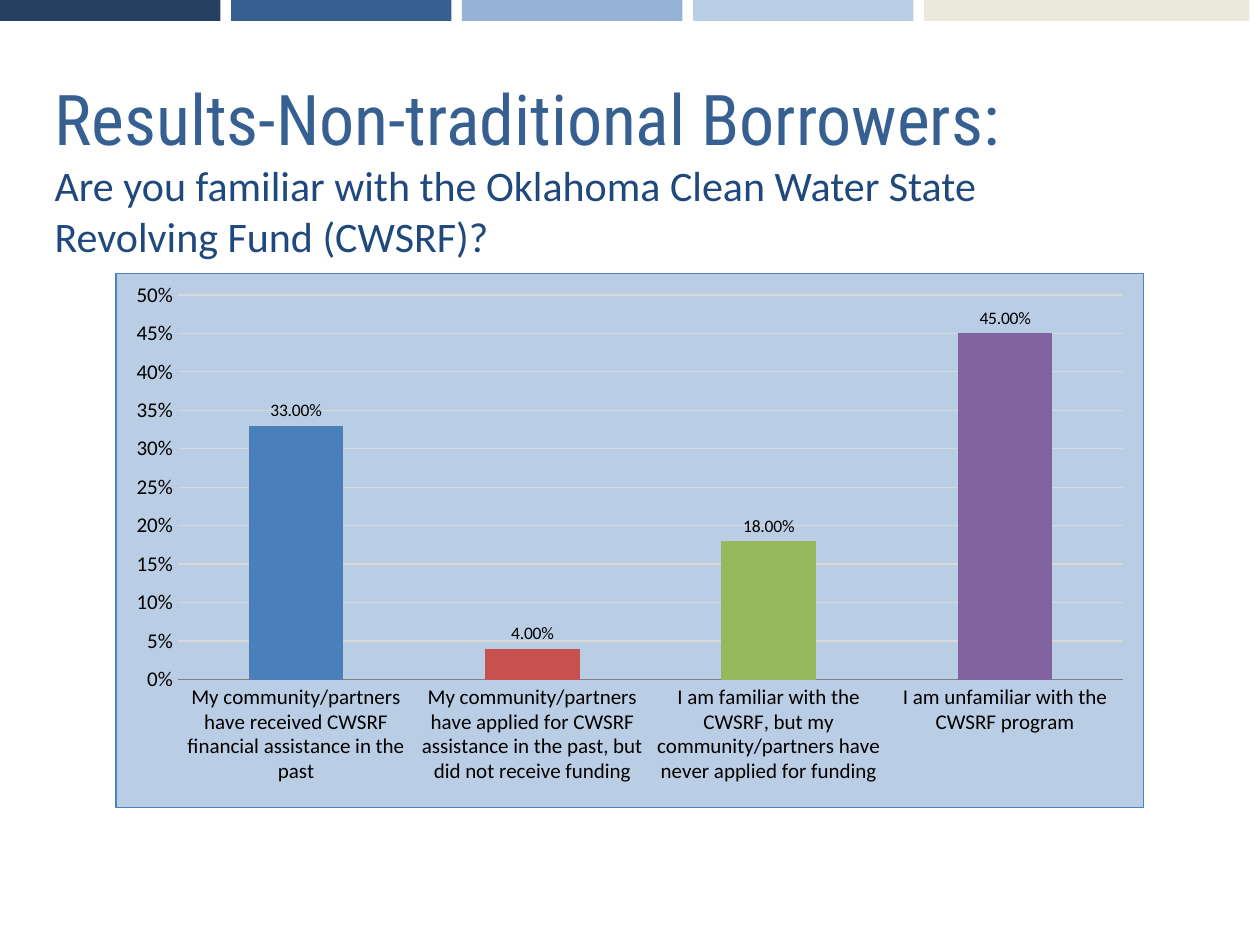
from lxml import etree
from pptx import Presentation
from pptx.chart.data import CategoryChartData
from pptx.dml.color import RGBColor
from pptx.enum.chart import XL_CHART_TYPE, XL_LABEL_POSITION, XL_TICK_MARK
from pptx.enum.shapes import MSO_SHAPE
from pptx.enum.text import MSO_ANCHOR, MSO_AUTO_SIZE, PP_ALIGN
from pptx.oxml import parse_xml
from pptx.oxml.ns import nsdecls, qn
from pptx.util import Inches, Pt

COLUMN = XL_CHART_TYPE.COLUMN_CLUSTERED
OUTSIDE = XL_LABEL_POSITION.OUTSIDE_END
NO_TICK = XL_TICK_MARK.NONE
RECT = MSO_SHAPE.RECTANGLE
MIDDLE = MSO_ANCHOR.MIDDLE
NO_FIT = MSO_AUTO_SIZE.NONE
LEFT = PP_ALIGN.LEFT
UNIT = Inches(1) / 12

STRIPES = [("254061", 100), ("376092", 100), ("95B3D7", 100),
           ("B9CDE5", 100), ("DDD9C3", 58)]
TITLE = [
    ("Results-Non-traditional Borrowers:", "376092",
     {"size": Pt(40), "name": "Roboto Condensed"}),
    ("Are you familiar with the Oklahoma Clean Water State Revolving Fund (CWSRF)?",
     "1F497D", {"size": Pt(24), "name": "Calibri"}),
]
ANSWERS = [
    ("My community/partners have received CWSRF financial assistance in the past",
     0.33, "4980BA"),
    ("My community/partners have applied for CWSRF assistance in the past, "
     "but did not receive funding", 0.04, "C6514E"),
    ("I am familiar with the CWSRF, but my community/partners have never "
     "applied for funding", 0.18, "96B95D"),
    ("I am unfamiliar with the CWSRF program", 0.45, "81649F"),
]


def rgb(value):
    """Turn a hex string into a colour."""
    return RGBColor.from_string(value)


def apply(target, values):
    """Set each named attribute on the target."""
    for name, value in values.items():
        setattr(target, name, value)


class SlideBuilder:
    """Hold the style and the slide on a grid of twelfths of an inch."""

    font = "Calibri"
    panel, border, grid, axis = "B9CDE5", "4F81BD", "D8D8D8", "808080"

    def __init__(self, prs):
        """Add a title-only slide."""
        self.s = prs.slides.add_slide(prs.slide_layouts[5])

    def box(self, *cells):
        """Convert grid cells to lengths."""
        return [round(cell * UNIT) for cell in cells]

    def stripe(self, cells, color, opacity):
        """Draw one plain colour block."""
        sp = self.s.shapes.add_shape(RECT, *self.box(*cells))
        sp.shadow.inherit = False
        sp.line.fill.background()
        sp.fill.solid()
        sp.fill.fore_color.rgb = rgb(color)
        if opacity < 100:
            clr = sp.fill._xPr.find(".//" + qn("a:srgbClr"))
            etree.SubElement(clr, qn("a:alpha"), val=str(opacity * 1000))

    def title(self, cells, lines):
        """Place and fill the title, one paragraph for each line."""
        sp = self.s.shapes.title
        apply(sp, dict(zip(("left", "top", "width", "height"), self.box(*cells))))
        tf = sp.text_frame
        apply(tf, {"word_wrap": True, "auto_size": NO_FIT, "vertical_anchor": MIDDLE})
        tf.text = "\n".join(text for text, _, _ in lines)
        for p, (_, color, values) in zip(tf.paragraphs, lines):
            p.alignment = LEFT
            r = p.runs[0]
            apply(r.font, values)
            r.font.color.rgb = rgb(color)

    def chart(self, cells, answers, plot_area):
        """Add the column chart with one colour for each answer."""
        data = CategoryChartData(number_format="0.00%")
        data.categories = [text for text, _, _ in answers]
        data.add_series("Series 1", [value for _, value, _ in answers])
        chart = self.s.shapes.add_chart(COLUMN, *self.box(*cells), data).chart
        apply(chart, {"has_legend": False, "has_title": False})
        apply(chart.font, {"size": Pt(18), "name": self.font})
        chart.font.color.rgb = rgb("000000")
        plot = chart.plots[0]
        apply(plot, {"gap_width": 150, "vary_by_categories": False,
                     "has_data_labels": True})
        labels = plot.data_labels
        apply(labels, {"show_value": True, "number_format": "0.00%",
                       "number_format_is_linked": False, "position": OUTSIDE})
        labels.font.size = Pt(10)
        for i, (_, _, color) in enumerate(answers):
            fill = plot.series[0].points[i].format.fill
            fill.solid()
            fill.fore_color.rgb = rgb(color)
        self.axes(chart)
        self.frame(chart, plot_area)

    def axes(self, chart):
        """Style both axes and the gridlines."""
        cat, val = chart.category_axis, chart.value_axis
        for axis in (cat, val):
            apply(axis, {"major_tick_mark": NO_TICK, "minor_tick_mark": NO_TICK})
            axis.tick_labels.font.size = Pt(12)
        apply(val, {"minimum_scale": 0, "maximum_scale": 0.5, "major_unit": 0.05,
                    "has_major_gridlines": True})
        apply(val.tick_labels, {"number_format": "0%", "number_format_is_linked": False})
        val.format.line.fill.background()
        for line, color in ((cat.format.line, self.axis),
                            (val.major_gridlines.format.line, self.grid)):
            line.width = Pt(0.75)
            line.color.rgb = rgb(color)

    def frame(self, chart, plot_area):
        """Fill and outline the chart and fix its inner plot area."""
        root = chart._chartSpace
        root.find(qn("c:chart")).addnext(parse_xml(
            f'<c:spPr {nsdecls("c", "a")}><a:solidFill><a:srgbClr val="{self.panel}"/>'
            f'</a:solidFill><a:ln w="{Pt(0.75)}"><a:solidFill>'
            f'<a:srgbClr val="{self.border}"/></a:solidFill></a:ln></c:spPr>'))
        area = root.find(".//" + qn("c:plotArea"))
        for old in area.findall(qn("c:layout")):
            area.remove(old)
        layout = etree.Element(qn("c:layout"))
        manual = etree.SubElement(layout, qn("c:manualLayout"))
        settings = [("layoutTarget", "inner"), ("xMode", "edge"), ("yMode", "edge")]
        for name, value in settings + list(zip("xywh", plot_area)):
            etree.SubElement(manual, qn(f"c:{name}"), val=str(value))
        area.insert(0, layout)


def main():
    """Build and save the slide."""
    prs = Presentation()
    prs.slide_width, prs.slide_height = Inches(10), Inches(7.5)
    slide = SlideBuilder(prs)
    for i, (color, opacity) in enumerate(STRIPES):
        width = 31 if i == len(STRIPES) - 1 else 21
        slide.stripe((22 * i, 0, width, 2), color, opacity)
    slide.title((4, 7, 105, 18), TITLE)
    slide.chart((11, 26, 98, 51), ANSWERS, (0.06, 0.04, 0.92, 0.72))
    prs.save("out.pptx")


if __name__ == "__main__":
    main()
